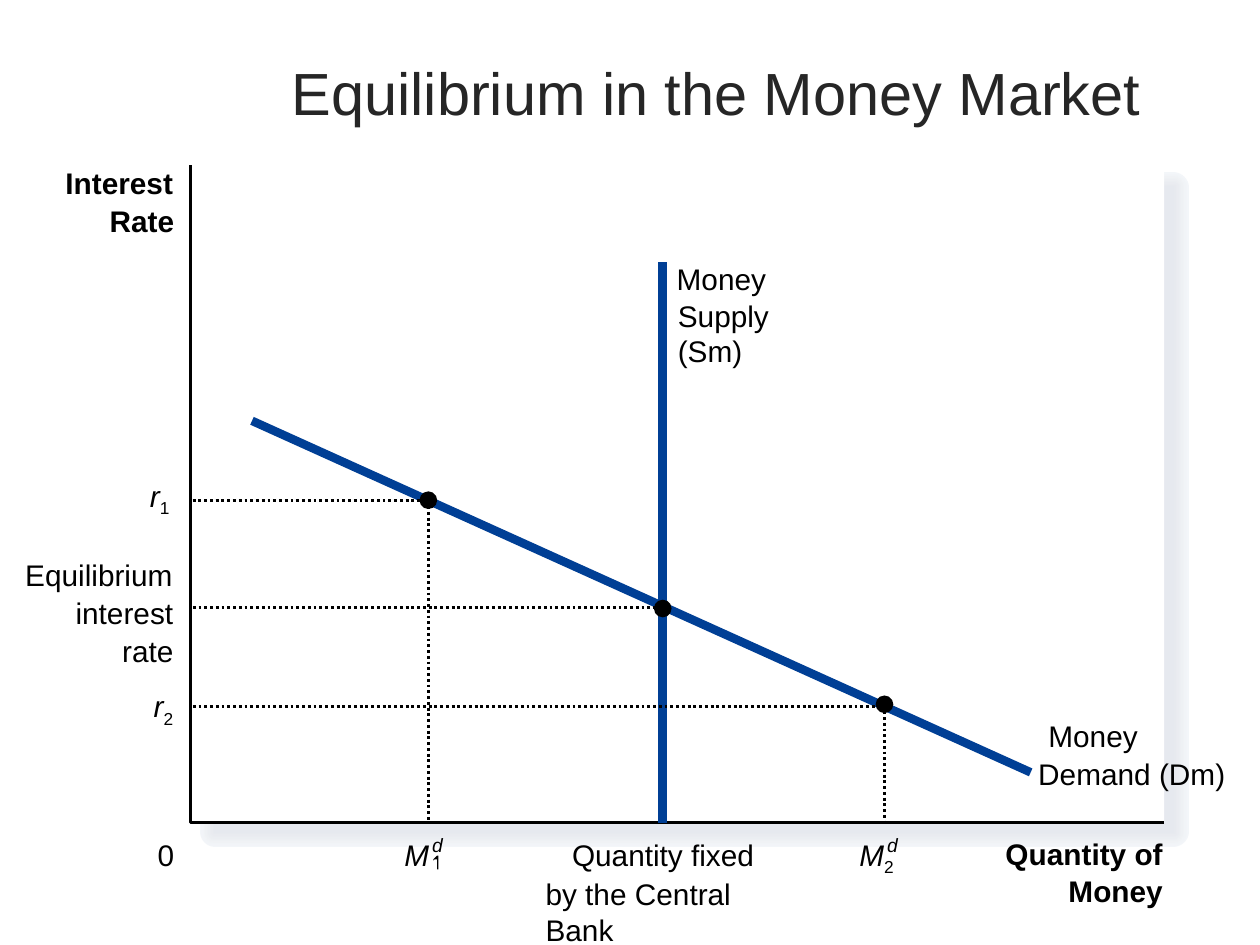
from pptx import Presentation
from pptx.dml.color import RGBColor as RGB
from pptx.enum.dml import MSO_LINE_DASH_STYLE as DASH
from pptx.enum.shapes import MSO_CONNECTOR as CONN, MSO_SHAPE as SHAPE
from pptx.enum.text import MSO_ANCHOR as ANCHOR, PP_ALIGN as ALIGN
from pptx.oxml.ns import qn
from pptx.util import Inches, Pt
from lxml.etree import SubElement

THEME = {
    "font": "Arial", "title": Pt(34), "body": Pt(17), "small": Pt(11),
    "ink": RGB.from_string("000000"), "heading": RGB.from_string("262626"),
    "curve": RGB.from_string("003F95"), "paper": RGB.from_string("FFFFFF"),
    "thin": Pt(1.63), "thick": Pt(4.88),
    "shadow": ["F3F6F9", "F2F4F8", "F1F4F7", "F0F2F5", "EEF1F4", "EDEFF3",
               "EBEEF2", "EAECF1", "E9EBF0", "E7EAEF", "E6E9EF"],
}
LEFT, TOP, RIGHT, BASE = 1.51, 1.31, 9.24, 6.53
GUIDE_LEFT, DOT = 1.53, 0.14

prs = Presentation()
prs.slide_width, prs.slide_height = Inches(10), Inches(7.5)
s = prs.slides.add_slide(prs.slide_layouts[6])


def add_text(x, y, w, h, *runs):
    tf = s.shapes.add_textbox(*map(Inches, (x, y, w, h))).text_frame
    for name in ("margin_left", "margin_top", "margin_right", "margin_bottom"):
        setattr(tf, name, 0)
    tf.word_wrap = True
    for text, extra in runs:
        r = tf.paragraphs[0].add_run()
        r.text = text
        fmt = {"name": THEME["font"], "size": THEME["body"], **extra}
        if fmt.pop("sub", False):
            r._r.get_or_add_rPr().set("baseline", "-25000")
        r.font.color.rgb = fmt.pop("color", THEME["ink"])
        for key, value in fmt.items():
            setattr(r.font, key, value)
    return tf


def add_path(points, color, width, dash=None):
    points = [tuple(map(Inches, pt)) for pt in points]
    if len(points) == 2:
        sp = s.shapes.add_connector(CONN.STRAIGHT, *points[0], *points[1])
        SubElement(sp._element.spPr, qn("a:effectLst"))
    else:
        fb = s.shapes.build_freeform(*points[0])
        fb.add_line_segments(points[1:], close=False)
        sp = fb.convert_to_shape()
        sp.shadow.inherit = False
        sp.fill.background()
    sp.line.color.rgb = color
    sp.line.width = width
    if dash:
        sp.line.dash_style = dash


tf = add_text(0.67, 0.31, 9, 0.94,
              ("Equilibrium in the Money Market",
               {"size": THEME["title"], "color": THEME["heading"]}))
tf.margin_left = Inches(1.03)
tf.vertical_anchor = ANCHOR.MIDDLE
p = tf.paragraphs[0]
p.alignment, p.line_spacing = ALIGN.CENTER, 0.8

layers = len(THEME["shadow"])
for i, shade in enumerate(THEME["shadow"]):
    sp = s.shapes.add_shape(SHAPE.RECTANGLE, *map(Inches, (1.71, 1.49, 7.6, 5.11)))
    sp.shadow.inherit = False
    sp.fill.solid()
    sp.fill.fore_color.rgb = sp.line.color.rgb = RGB.from_string(shade)
    sp.line.width = Pt(round(1.62 * (layers - i), 2))

sp = s.shapes.add_shape(SHAPE.RECTANGLE,
                        *map(Inches, (LEFT, TOP, RIGHT - LEFT, BASE - TOP)))
sp.shadow.inherit = False
sp.fill.solid()
sp.fill.fore_color.rgb = THEME["paper"]
sp.line.fill.background()
add_path([(LEFT, TOP), (LEFT, BASE), (RIGHT, BASE)], THEME["ink"], THEME["thin"])

add_path([(2, 3.34), (8.18, 6.13)], THEME["curve"], THEME["thick"])
add_path([(5.26, 2.08), (5.26, BASE)], THEME["curve"], THEME["thick"])

for guide in (
    [(GUIDE_LEFT, 5.61), (7.02, 5.61), (7.02, BASE)],
    [(GUIDE_LEFT, 3.97), (3.4, 3.97), (3.4, BASE)],
    [(GUIDE_LEFT, 4.82), (5.26, 4.82)],
):
    add_path(guide, THEME["ink"], THEME["thin"], DASH.ROUND_DOT)

for x, y in ((6.95, 5.52), (3.33, 3.9), (5.19, 4.76)):
    sp = s.shapes.add_shape(SHAPE.OVAL, *map(Inches, (x, y, DOT, DOT)))
    sp.shadow.inherit = False
    sp.fill.solid()
    sp.fill.fore_color.rgb = THEME["ink"]
    sp.line.fill.background()

for text, x, y, w in (
    ("Quantity of", 7.98, 6.63, 1.41), ("Money", 8.48, 6.93, 0.91),
    ("Interest", 0.52, 1.31, 1), ("Rate", 0.87, 1.61, 0.65),
):
    add_text(x, y, w, 0.34, (text, {"bold": True}))

for text, x, y, w, h in (
    ("0", 1.25, 6.64, 0.25, 0.34),
    ("Money", 8.32, 5.7, 0.82, 0.34),
    ("Demand (Dm)", 8.24, 6, 1.6, 0.29),
    ("Quantity fixed", 4.54, 6.64, 1.57, 0.34),
    ("by the Central Bank", 4.33, 6.95, 1.8, 0.58),
    ("Money", 5.37, 2.07, 0.82, 0.34),
    ("Supply (Sm)", 5.38, 2.36, 1.1, 0.58),
    ("Equilibrium", 0.2, 4.42, 1.31, 0.34),
    ("interest", 0.6, 4.72, 0.9, 0.34),
    ("rate", 0.97, 5.02, 0.52, 0.34),
):
    add_text(x, y, w, h, (text, {}))

for symbol, sub, x, y in (
    ("r", "1", 1.19, 3.79), ("r", "2", 1.22, 5.46),
    ("M", "2", 6.82, 6.64), ("M", "", 3.21, 6.64),
):
    runs = [(symbol, {"italic": True})]
    if sub:
        runs.append((sub, {"sub": True}))
    add_text(x, y, 0.36, 0.28, *runs)

for x in (7.04, 3.43):
    add_text(x, 6.61, 0.15, 0.22, ("d", {"size": THEME["small"], "italic": True}))

numeral = [(3.48, 6.79), (3.47, 6.79), (3.46, 6.8), (3.44, 6.82), (3.44, 6.83),
           (3.45, 6.82), (3.47, 6.82), (3.47, 6.9), (3.48, 6.9)]
points = [tuple(map(Inches, pt)) for pt in numeral]
fb = s.shapes.build_freeform(*points[0])
fb.add_line_segments(points[1:], close=True)
sp = fb.convert_to_shape()
sp.shadow.inherit = False
sp.fill.solid()
sp.fill.fore_color.rgb = THEME["ink"]
sp.line.fill.background()

prs.save("out.pptx")
